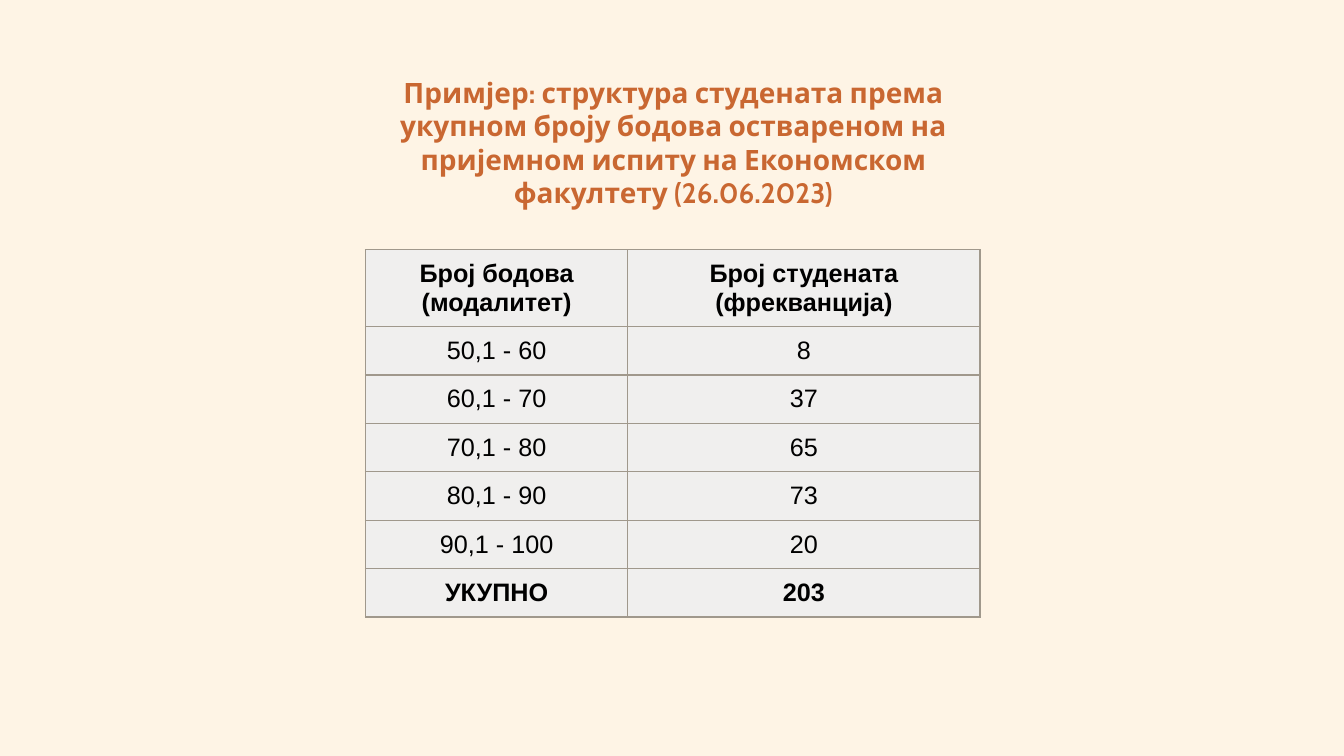
from lxml import etree
from pptx import Presentation
from pptx.dml.color import RGBColor
from pptx.enum.text import MSO_ANCHOR, MSO_AUTO_SIZE, PP_ALIGN
from pptx.oxml.ns import qn
from pptx.util import Pt

CENTER = PP_ALIGN.CENTER
TOP = MSO_ANCHOR.TOP
NO_FIT = MSO_AUTO_SIZE.NONE

# Content
TITLE = ("Примјер: структура студената према укупном броју бодова "
         "оствареном на пријемном испиту на Економском факултету (26.06.2023)")
SCORES = [
    ("Број бодова (модалитет)", "Број студената (фрекванција)"),
    ("50,1 - 60", "8"),
    ("60,1 - 70", "37"),
    ("70,1 - 80", "65"),
    ("80,1 - 90", "73"),
    ("90,1 - 100", "20"),
    ("УКУПНО", "203"),
]

# Formats
COLORS = {"background": "FEF4E5", "title": "C96731", "text": "000000",
          "cell": "F0EFEE", "border": "A0988C"}
TITLE_BOX = {"left": Pt(240), "top": Pt(50.4), "width": Pt(482), "height": Pt(50)}
TITLE_FRAME = {"word_wrap": True, "auto_size": NO_FIT, "vertical_anchor": TOP,
               "margin_left": Pt(7.2), "margin_right": Pt(7.2),
               "margin_top": Pt(3.6), "margin_bottom": Pt(3.6)}
TITLE_PARAGRAPH = {"alignment": CENTER, "line_spacing": Pt(23.9)}
TITLE_FONT = {"name": "Cabin", "size": Pt(20), "bold": True}
CELL_FORMAT = {side: Pt(7.2) for side in
               ("margin_left", "margin_right", "margin_top", "margin_bottom")}
CELL_FONT = {"name": "Arial", "size": Pt(18)}
TABLE_LEFT, TABLE_TOP = 261, 178.5
COLUMN_WIDTHS = (187.5, 251.5)
HEADER_HEIGHT, ROW_HEIGHT = 50, 34
BORDER_WIDTH = 1


def apply(target, formats):
    for key, value in formats.items():
        setattr(target, key, value)


def color(name):
    return RGBColor.from_string(COLORS[name])


def add_borders(cell):
    properties = cell._tc.get_or_add_tcPr()
    for index, side in enumerate(("lnL", "lnR", "lnT", "lnB")):
        line = etree.Element(qn(f"a:{side}"), w=str(Pt(BORDER_WIDTH)))
        fill = etree.SubElement(line, qn("a:solidFill"))
        etree.SubElement(fill, qn("a:srgbClr"), val=COLORS["border"])
        properties.insert(index, line)


prs = Presentation()
prs.slide_width, prs.slide_height = Pt(960), Pt(540)
slide = prs.slides.add_slide(prs.slide_layouts[5])
slide.background.fill.solid()
slide.background.fill.fore_color.rgb = color("background")

# Title
title = slide.shapes.title
apply(title, TITLE_BOX)
title.text_frame.text = TITLE
apply(title.text_frame, TITLE_FRAME)
heading = title.text_frame.paragraphs[0]
apply(heading, TITLE_PARAGRAPH)
apply(heading.runs[0].font, TITLE_FONT)
heading.runs[0].font.color.rgb = color("title")

# Frequency table
last_row = len(SCORES) - 1
row_heights = [HEADER_HEIGHT] + [ROW_HEIGHT] * last_row
table = slide.shapes.add_table(
    len(SCORES), len(COLUMN_WIDTHS), Pt(TABLE_LEFT), Pt(TABLE_TOP),
    Pt(sum(COLUMN_WIDTHS)), Pt(sum(row_heights))).table
for column, width in zip(table.columns, COLUMN_WIDTHS):
    column.width = Pt(width)
for row, height in zip(table.rows, row_heights):
    row.height = Pt(height)

for r, values in enumerate(SCORES):
    for c, value in enumerate(values):
        cell = table.cell(r, c)
        cell.text = value
        apply(cell, CELL_FORMAT)
        cell.fill.solid()
        cell.fill.fore_color.rgb = color("cell")
        add_borders(cell)
        entry = cell.text_frame.paragraphs[0]
        entry.alignment = CENTER
        font = entry.runs[0].font
        apply(font, CELL_FONT)
        font.bold = r in (0, last_row)
        font.color.rgb = color("text")

prs.save("out.pptx")
